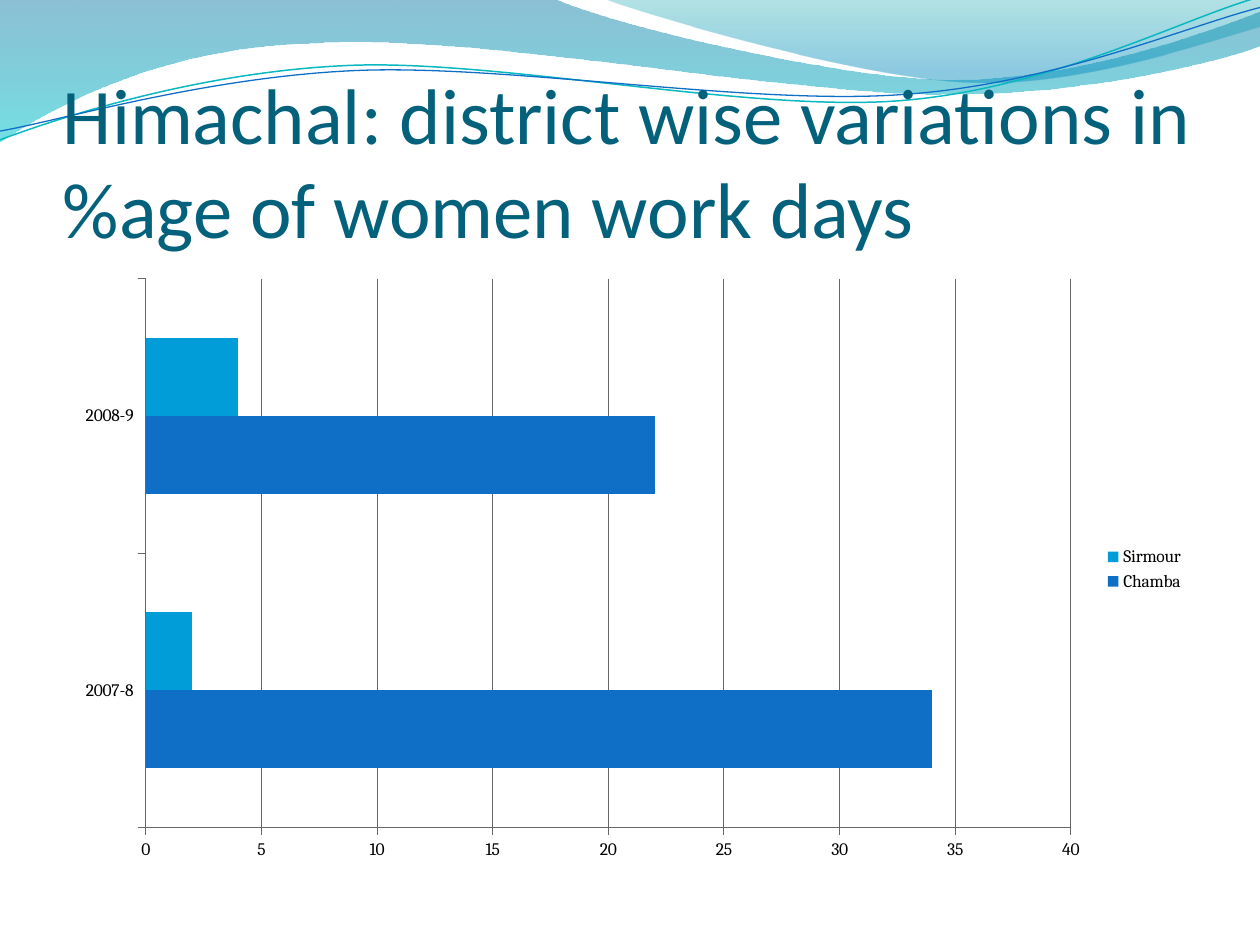
"""Build the Himachal women work days slide with its wave banner and bar chart."""
from math import cos, radians, sin

from lxml.etree import Element, SubElement
from pptx import Presentation
from pptx.chart.data import CategoryChartData
from pptx.dml.color import RGBColor
from pptx.enum.chart import XL_CHART_TYPE, XL_LEGEND_POSITION, XL_TICK_MARK
from pptx.enum.text import MSO_ANCHOR
from pptx.oxml.ns import qn
from pptx.util import Pt

COLORS = {
    "title": "04617B", "text": "000000", "axis": "666666",
    "Chamba": "0F6FC6", "Sirmour": "009DD9",
    "teal line": "0AB8BF", "blue line": "0F6FC6",
    "deep blue": "0074A1", "turquoise": "00C6CF",
    "sea green": "00A1A9", "sky blue": "008BBF",
}
TILT = 2.7


def color(name):
    return RGBColor.from_string(COLORS[name])


def add_wave(shapes, start, segments, close):
    points = [start]
    for segment in segments:
        points.extend(zip(segment[::2], segment[1::2]))
    pairs = [(Pt(x), Pt(y)) for x, y in points]
    builder = shapes.build_freeform(*pairs[0])
    builder.add_line_segments(pairs[1:], close=close)
    wave = builder.convert_to_shape()
    wave.shadow.inherit = False
    steps = iter(list(wave._element.spPr.iter(qn("a:lnTo"))))
    for segment in segments:
        pieces = [next(steps) for _ in range(len(segment) // 2)]
        if len(pieces) == 3:
            curve = Element(qn("a:cubicBezTo"))
            pieces[0].addprevious(curve)
            for piece in pieces:
                curve.append(piece[0])
                piece.getparent().remove(piece)
    return wave


presentation = Presentation()
presentation.slide_width = Pt(720)
presentation.slide_height = Pt(540)
slide = presentation.slides.add_slide(presentation.slide_layouts[6])

filled_waves = [
    ((0, 0), [
        (316.8, -0.7),
        (342.7, 12.2, 478.1, 45.4, 545.8, 45.4),
        (614.2, 45.4, 689.8, 18.7, 720, 6.5),
        (720.7, 25.9),
        (707.8, 31.7, 626.4, 54.7, 537.1, 54),
        (447.8, 54, 275, 20.2, 185, 24.5),
        (92.9, 25.9, 33.1, 59.8, -0.7, 81.4),
    ], [(0, "deep blue", 45), (1, "turquoise", 55)]),
    ((344.9, -0.7), [
        (366.5, 7.9, 491, 44.6, 553.7, 46.8),
        (616.3, 49.7, 691.9, 23, 720, 15.1),
        (720, 0),
    ], [(0, "sea green", 30), (0.8, "sky blue", 45)]),
]
for start, segments, stops in filled_waves:
    wave = add_wave(slide.shapes, start, segments, True)
    wave.line.fill.background()
    wave.fill.gradient()
    wave.fill.gradient_angle = 270
    for gradient_stop, (position, name, _) in zip(wave.fill.gradient_stops, stops):
        gradient_stop.position = position
        gradient_stop.color.rgb = color(name)
    stop_colors = wave._element.spPr.iter(qn("a:srgbClr"))
    for stop_color, (_, _, opacity) in zip(stop_colors, stops):
        SubElement(stop_color, qn("a:alpha")).set("val", str(opacity * 1000))

line_waves = [
    ("teal line", 0.85, (359.3, 41.4), [
        (0, 79.9),
        (34.6, 67, 113.8, 41, 199.4, 37.4),
        (284.4, 33.8, 427, 64.1, 513.4, 57.6),
        (599.8, 51.1, 675.4, 10.8, 718.6, -1.4),
    ]),
    ("blue line", 0.75, (359.6, 42.5), [
        (0, 74.9),
        (33.8, 69.1, 118.1, 43.9, 203.8, 40.3),
        (290.2, 36.7, 429.8, 60.5, 516.2, 54),
        (601.9, 48.2, 677.5, 15.1, 720, 4.3),
    ]),
]
cosine, sine = cos(radians(TILT)), sin(radians(TILT))
for name, width, (center_x, center_y), segments in line_waves:
    level_segments = []
    for segment in segments:
        level = []
        for x, y in zip(segment[::2], segment[1::2]):
            across, down = x - center_x, y - center_y
            level.append(center_x + across * cosine - down * sine)
            level.append(center_y + across * sine + down * cosine)
        level_segments.append(level)
    wave = add_wave(slide.shapes, level_segments[0], level_segments[1:], False)
    wave.rotation = 360 - TILT
    wave.fill.background()
    wave.line.color.rgb = color(name)
    wave.line.width = Pt(width)

title = slide.shapes.add_textbox(Pt(36), Pt(55.5), Pt(648), Pt(90))
text_frame = title.text_frame
text_frame.word_wrap = True
text_frame.vertical_anchor = MSO_ANCHOR.BOTTOM
text_frame.margin_left = text_frame.margin_right = text_frame.margin_bottom = Pt(0)
text_frame.margin_top = Pt(3.6)
run = text_frame.paragraphs[0].add_run()
run.text = "Himachal: district wise variations in %age of women work days"
run.font.name = "Calibri"
run.font.size = Pt(45)
run.font.color.rgb = color("title")

chart_data = CategoryChartData()
chart_data.categories = ["2007-8", "2008-9"]
chart_data.add_series("Chamba", [34, 22])
chart_data.add_series("Sirmour", [2, 4])
chart = slide.shapes.add_chart(
    XL_CHART_TYPE.BAR_CLUSTERED, Pt(36), Pt(152.5), Pt(648), Pt(345.5), chart_data
).chart
chart.has_title = False
chart.font.name = "Cambria"
chart.font.size = Pt(10)
chart.font.color.rgb = color("text")
chart.has_legend = True
chart.legend.position = XL_LEGEND_POSITION.RIGHT
chart.legend.include_in_layout = False

plot = chart.plots[0]
plot.gap_width = 150
plot.vary_by_categories = False
for series in plot.series:
    series.format.fill.solid()
    series.format.fill.fore_color.rgb = color(series.name)

chart.value_axis.minimum_scale = 0
chart.value_axis.maximum_scale = 40
chart.value_axis.major_unit = 5
chart.value_axis.has_major_gridlines = True
for axis in (chart.category_axis, chart.value_axis):
    axis.major_tick_mark = XL_TICK_MARK.OUTSIDE
for lined in (chart.category_axis, chart.value_axis, chart.value_axis.major_gridlines):
    lined.format.line.color.rgb = color("axis")
    lined.format.line.width = Pt(0.5)

presentation.save("out.pptx")
